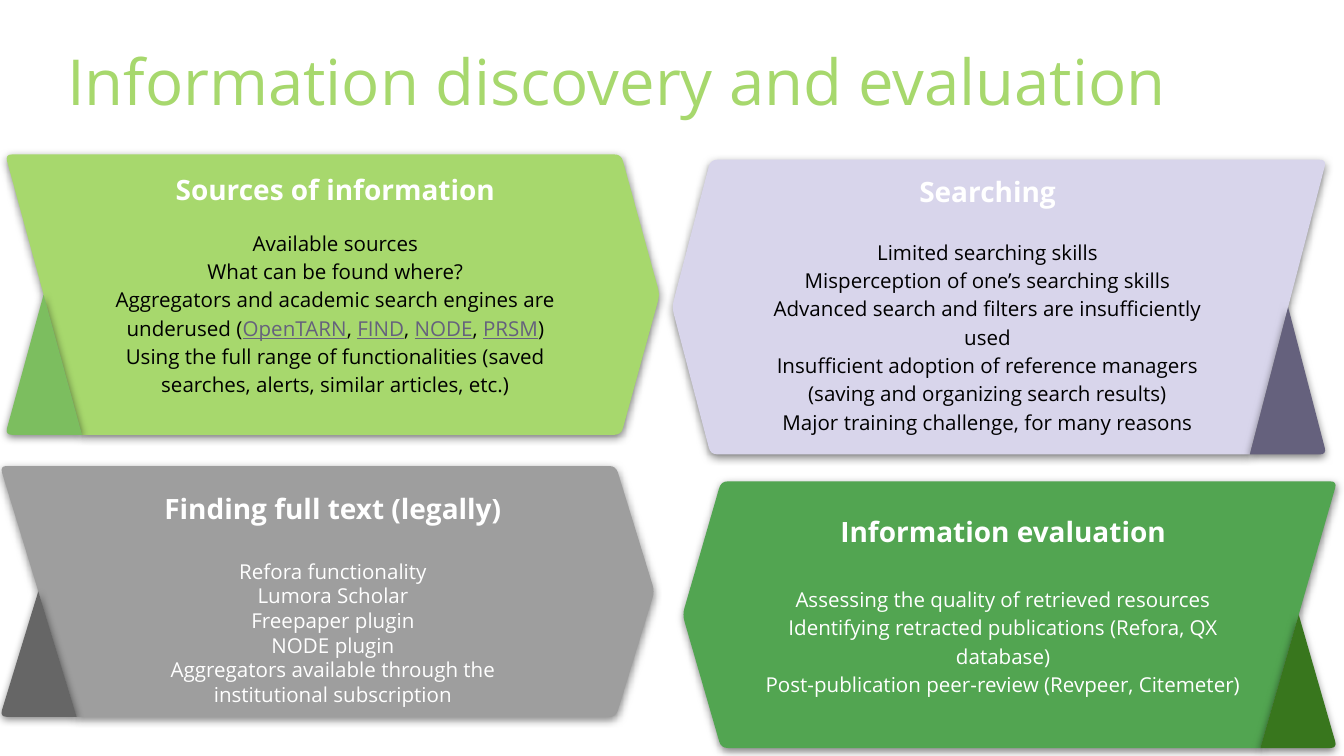
from dataclasses import dataclass

from lxml import etree
from pptx import Presentation
from pptx.dml.color import RGBColor
from pptx.enum import text
from pptx.oxml import ns
from pptx.util import Cm, Pt


@dataclass(frozen=True)
class Theme:
    font: str = "Open Sans"
    title_size: int = 34
    heading_size: int = 15
    body_size: int = 11
    lime: str = "A7D86D"
    lime_fold: str = "7CBE5F"
    lilac: str = "D8D5EB"
    plum: str = "65617D"
    grey: str = "9E9E9E"
    grey_fold: str = "666666"
    green: str = "52A551"
    green_fold: str = "38761D"
    white: str = "FFFFFF"
    black: str = "000000"


THEME = Theme()
BANNER_WIDTH = 12.37
TIP = 0.73      # depth of the pointed end
FOLD = 1.45     # width of the folded corner
RADIUS = 0.13

# Each banner: box and text box are left, top, width, height in cm;
# in a line of text, the parts between bars are drawn as links
BANNERS = [
    dict(box=(12.7, 3.02, BANNER_WIDTH, 5.57), points_left=True,
         fill=THEME.lilac, fold=THEME.plum, ink=THEME.black,
         text_box=(14.07, 3.05, 9.19, 4.8), gap=15, spacing=1.15,
         heading="Searching",
         lines=["Limited searching skills",
                "Misperception of one’s searching skills",
                "Advanced search and filters are insufficiently used",
                "Insufficient adoption of reference managers "
                "(saving and organizing search results)",
                "Major training challenge, for many reasons"]),
    dict(box=(0, 8.81, BANNER_WIDTH, 4.74), points_left=False,
         fill=THEME.grey, fold=THEME.grey_fold, ink=THEME.white,
         text_box=(2.03, 9.04, 8.53, 5.13), gap=18, spacing=1.0,
         heading="Finding full text (legally)",
         lines=["Refora functionality",
                "Lumora Scholar",
                "Freepaper plugin",
                "NODE plugin",
                "Aggregators available through the institutional subscription"]),
    dict(box=(12.9, 9.1, BANNER_WIDTH, 5.04), points_left=True,
         fill=THEME.green, fold=THEME.green_fold, ink=THEME.white,
         text_box=(14.07, 9.47, 9.78, 3.84), gap=19, spacing=1.15,
         heading="Information evaluation",
         lines=["Assessing the quality of retrieved resources",
                "Identifying retracted publications (Refora, QX database)",
                "Post-publication peer-review (Revpeer, Citemeter)"]),
    dict(box=(0.1, 2.92, BANNER_WIDTH, 5.3), points_left=False,
         fill=THEME.lime, fold=THEME.lime_fold, ink=THEME.black,
         text_box=(1.45, 3.02, 9.78, 4.67), gap=11, spacing=1.15,
         heading="Sources of information",
         lines=["Available sources",
                "What can be found where?",
                "Aggregators and academic search engines are underused "
                "(|OpenTARN|, |FIND|, |NODE|, |PRSM|)",
                "Using the full range of functionalities "
                "(saved searches, alerts, similar articles, etc.)"]),
]


def style(font, size, color, bold=False, underline=False):
    font.name = THEME.font
    font.size = Pt(size)
    font.bold = bold
    font.underline = underline
    font.color.rgb = RGBColor.from_string(color)


def add_text_box(page, box, inset):
    frame = page.shapes.add_textbox(*(Cm(v) for v in box)).text_frame
    frame.word_wrap = True
    frame.margin_left = frame.margin_right = Cm(inset)
    frame.margin_top = frame.margin_bottom = Cm(inset)
    return frame


def add_shadow(shape):
    properties = shape._element.spPr
    effects = etree.SubElement(properties, ns.qn("a:effectLst"))
    shadow = etree.SubElement(
        effects, ns.qn("a:outerShdw"), blurRad=str(Pt(4.5)),
        dist=str(Pt(1.5)), dir="5400000", algn="bl", rotWithShape="0")
    color = etree.SubElement(shadow, ns.qn("a:srgbClr"), val=THEME.black)
    etree.SubElement(color, ns.qn("a:alpha"), val="50000")


def round_corner(before, corner, after):
    """Points of a quadratic curve that softens one corner."""
    def toward(end):
        dx, dy = end[0] - corner[0], end[1] - corner[1]
        share = RADIUS / (dx * dx + dy * dy) ** 0.5
        return corner[0] + dx * share, corner[1] + dy * share

    start, end = toward(before), toward(after)
    steps = [i / 4 for i in range(5)]
    return [tuple((1 - t) ** 2 * a + 2 * t * (1 - t) * b + t * t * c
                  for a, b, c in zip(start, corner, end)) for t in steps]


def add_outline(page, corners, sharp, color):
    """Draw a polygon with all corners softened but those in sharp."""
    points = []
    for i, corner in enumerate(corners):
        if i in sharp:
            points.append(corner)
        else:
            points += round_corner(corners[i - 1], corner,
                                   corners[(i + 1) % len(corners)])
    points = [(Cm(x), Cm(y)) for x, y in points]
    builder = page.shapes.build_freeform(*points[0])
    builder.add_line_segments(points[1:], close=True)
    shape = builder.convert_to_shape()
    shape.fill.solid()
    shape.fill.fore_color.rgb = RGBColor.from_string(color)
    shape.line.fill.background()
    add_shadow(shape)


def add_ribbon(page, box, points_left, fill, fold):
    left, top, width, height = box

    def place(corners):
        return [(left + (width - x if points_left else x), top + y)
                for x, y in corners]

    shoulder = width - TIP
    body = [(0, 0), (shoulder, 0), (width, height / 2),
            (shoulder, height), (FOLD, height)]
    flap = [(FOLD / 2, height / 2), (FOLD, height), (0, height)]
    add_outline(page, place(body), {4}, fill)
    add_outline(page, place(flap), {0, 1}, fold)


def add_banner_text(page, banner):
    frame = add_text_box(page, banner["text_box"], 0.25)
    # Heading
    para = frame.paragraphs[0]
    para.text = banner["heading"]
    para.alignment = text.PP_ALIGN.CENTER
    para.space_after = Pt(banner["gap"])
    style(para.runs[0].font, THEME.heading_size, THEME.white, bold=True)
    # Body lines
    for line in banner["lines"]:
        para = frame.add_paragraph()
        para.alignment = text.PP_ALIGN.CENTER
        para.line_spacing = banner["spacing"]
        for i, part in enumerate(line.split("|")):
            is_link = i % 2 == 1
            span = para.add_run()
            span.text = part
            style(span.font, THEME.body_size,
                  THEME.plum if is_link else banner["ink"], underline=is_link)


def add_title(page, box):
    frame = add_text_box(page, box, 0)
    frame.vertical_anchor = text.MSO_ANCHOR.BOTTOM
    frame.text = "Information discovery and evaluation"
    style(frame.paragraphs[0].runs[0].font, THEME.title_size, THEME.lime)


def main():
    deck = Presentation()
    deck.slide_width, deck.slide_height = Cm(25.4), Cm(14.29)
    page = deck.slides.add_slide(deck.slide_layouts[6])
    add_title(page, (1.27, 0.53, 22.58, 1.7))
    for banner in BANNERS:
        add_ribbon(page, banner["box"], banner["points_left"],
                   banner["fill"], banner["fold"])
    for banner in BANNERS:
        add_banner_text(page, banner)
    deck.save("out.pptx")


if __name__ == "__main__":
    main()
